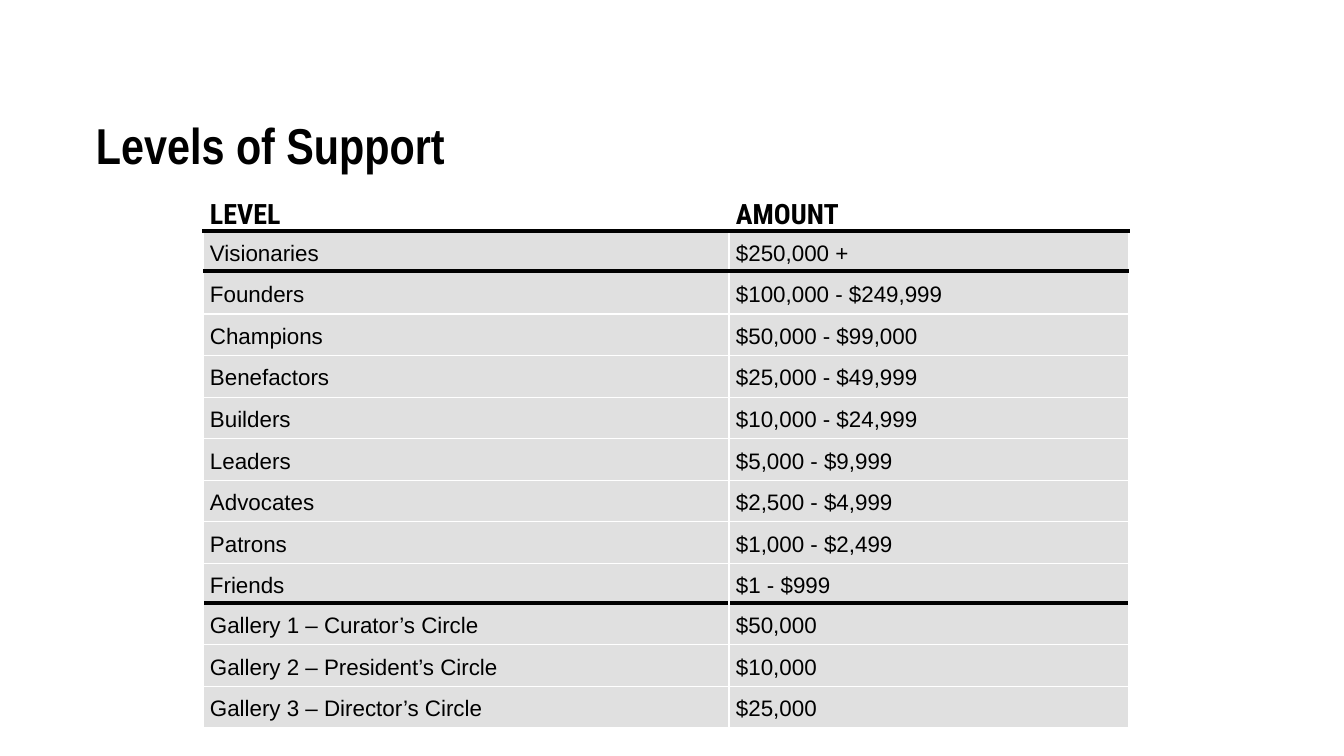
from lxml import etree
from pptx import Presentation
from pptx import util as u
from pptx.dml.color import RGBColor
from pptx.enum import shapes, text
from pptx.oxml.ns import qn

TITLE = "Levels of Support"
HEADER = ("LEVEL", "AMOUNT")
LEVELS = [
    ("Visionaries", "$250,000 +"),
    ("Founders", "$100,000 - $249,999"),
    ("Champions", "$50,000 - $99,000"),
    ("Benefactors", "$25,000 - $49,999"),
    ("Builders", "$10,000 - $24,999"),
    ("Leaders", "$5,000 - $9,999"),
    ("Advocates", "$2,500 - $4,999"),
    ("Patrons", "$1,000 - $2,499"),
    ("Friends", "$1 - $999"),
]
GALLERIES = [
    ("Gallery 1 – Curator’s Circle", "$50,000"),
    ("Gallery 2 – President’s Circle", "$10,000"),
    ("Gallery 3 – Director’s Circle", "$25,000"),
]

BLACK, WHITE, GREY = "000000", "FFFFFF", "E0E0E0"
SLIDE_WIDTH, SLIDE_HEIGHT = 1344, 756
TABLE_LEFT, COLUMN_WIDTHS = 203, (526, 400)
LEVELS_TOP, LEVELS_HEIGHT, HEADER_HEIGHT = 193, 412, 38
GALLERIES_TOP, GALLERIES_HEIGHT = 603, 125
DIVIDER_Y = 271
RULE = (BLACK, 3)
HAIRLINE = (WHITE, 1)


def px(length):
    return u.Emu(round(length * 914400 / 100.8))


def color(value):
    return RGBColor.from_string(value)


def write(frame, content, size=16, font="Arial", bold=False, spacing=1.15):
    paragraph = frame.paragraphs[0]
    paragraph.text = content
    paragraph.line_spacing = spacing
    paragraph.font.size = u.Pt(size)
    paragraph.font.name = font
    paragraph.font.bold = bold
    paragraph.font.color.rgb = color(BLACK)


def set_borders(cell, top, bottom):
    """Draw the four edges; the line elements must precede the fill."""
    properties = cell._tc.get_or_add_tcPr()
    edges = {"lnL": HAIRLINE, "lnR": HAIRLINE, "lnT": top, "lnB": bottom}
    for position, (tag, (line_color, points)) in enumerate(edges.items()):
        line = etree.Element(qn("a:" + tag), w=str(u.Pt(points)))
        fill = etree.SubElement(line, qn("a:solidFill"))
        etree.SubElement(fill, qn("a:srgbClr"), val=line_color)
        properties.insert(position, line)


def add_support_table(slide, top, height, rows, header=None):
    all_rows = ([header] if header else []) + rows
    frame = slide.shapes.add_table(
        len(all_rows), len(COLUMN_WIDTHS), px(TABLE_LEFT), px(top),
        px(sum(COLUMN_WIDTHS)), px(height))
    table = frame.table
    for column, width in zip(table.columns, COLUMN_WIDTHS):
        column.width = px(width)
    row_height = (height - (HEADER_HEIGHT if header else 0)) / len(rows)
    rule_below = 0 if header else -1
    for index, values in enumerate(all_rows):
        is_header = values is header
        table.rows[index].height = px(HEADER_HEIGHT if is_header else row_height)
        for cell, value in zip(table.rows[index].cells, values):
            cell.margin_left = cell.margin_right = px(7)
            cell.margin_top = cell.margin_bottom = 0
            cell.vertical_anchor = text.MSO_ANCHOR.MIDDLE
            cell.fill.solid()
            cell.fill.fore_color.rgb = color(WHITE if is_header else GREY)
            set_borders(cell,
                        top=RULE if index == rule_below + 1 else HAIRLINE,
                        bottom=RULE if index == rule_below else HAIRLINE)
            if is_header:
                write(cell.text_frame, value, size=20,
                      font="Roboto Condensed", bold=True)
            else:
                write(cell.text_frame, value)


def add_divider(slide, y):
    right = TABLE_LEFT + sum(COLUMN_WIDTHS)
    divider = slide.shapes.add_connector(
        shapes.MSO_CONNECTOR.STRAIGHT, px(TABLE_LEFT), px(y), px(right), px(y))
    divider.line.color.rgb = color(BLACK)
    divider.line.width = u.Pt(3)
    etree.SubElement(divider._element.spPr, qn("a:effectLst"))


def main():
    presentation = Presentation()
    presentation.slide_width = px(SLIDE_WIDTH)
    presentation.slide_height = px(SLIDE_HEIGHT)
    slide = presentation.slides.add_slide(presentation.slide_layouts[6])

    add_support_table(slide, LEVELS_TOP, LEVELS_HEIGHT, LEVELS, HEADER)
    title = slide.shapes.add_textbox(px(86), px(116), px(1159), px(128))
    title.text_frame.word_wrap = True
    write(title.text_frame, TITLE, size=36, font="Arial Narrow", bold=True,
          spacing=0.9)
    add_support_table(slide, GALLERIES_TOP, GALLERIES_HEIGHT, GALLERIES)
    add_divider(slide, DIVIDER_Y)

    presentation.save("out.pptx")


if __name__ == "__main__":
    main()
